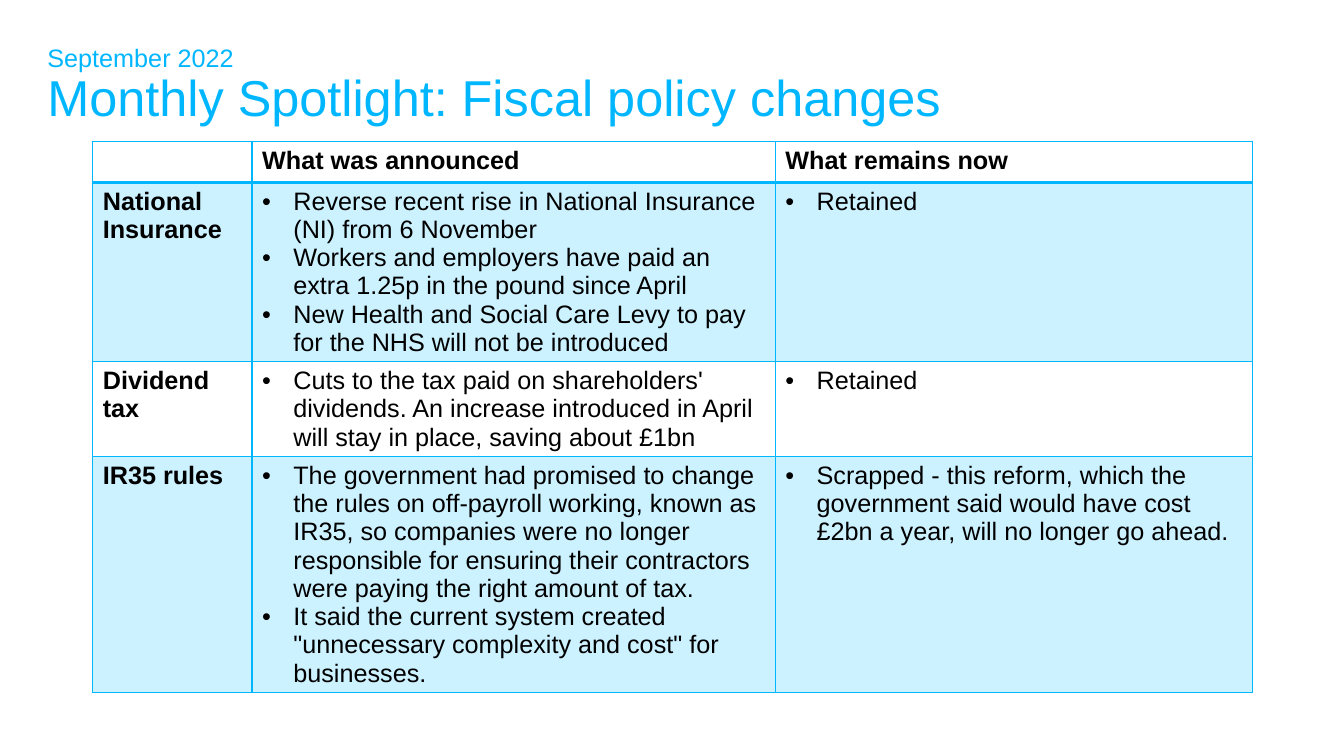
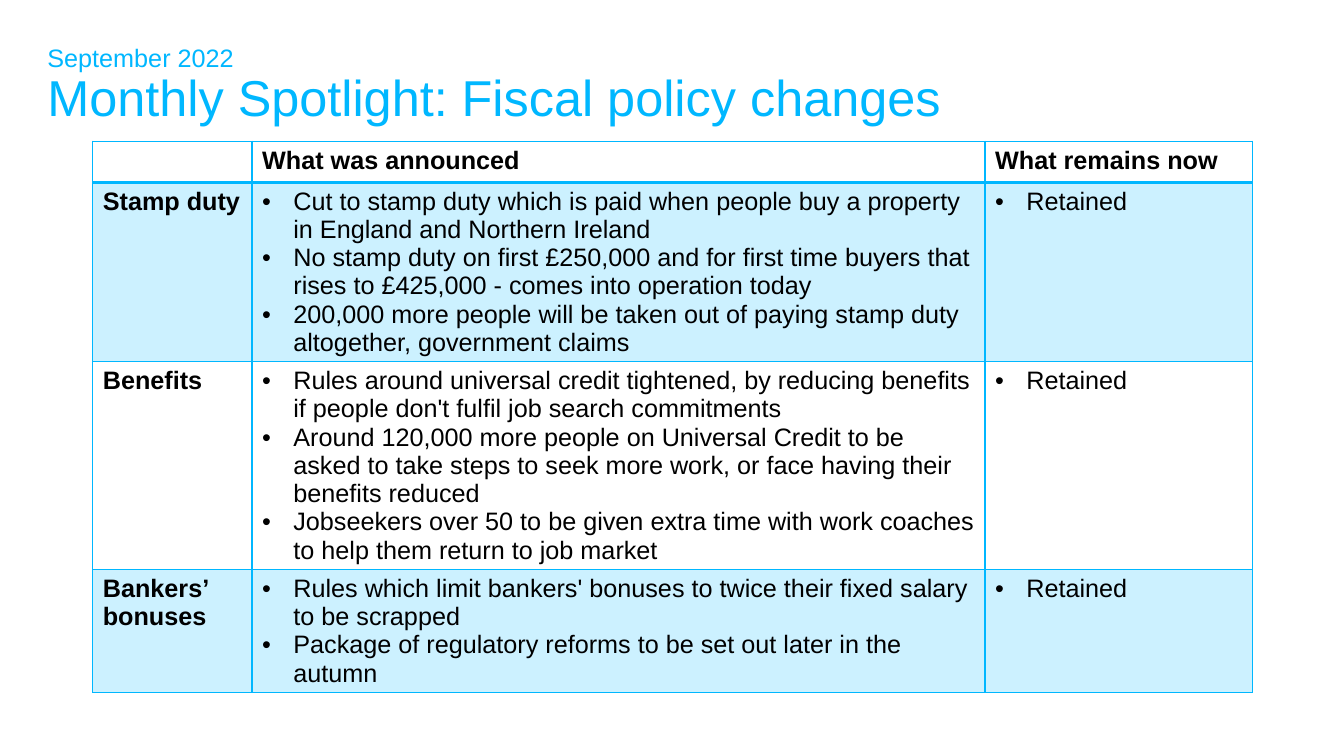
from lxml.etree import SubElement
from pptx import Presentation
from pptx.dml.color import RGBColor
from pptx.enum.text import MSO_ANCHOR, MSO_AUTO_SIZE, PP_ALIGN
from pptx.oxml.ns import qn
from pptx.util import Inches, Pt

ACCENT = "00B7FF"
BAND = "CCF1FF"
WHITE = "FFFFFF"
BLACK = "000000"
FONT = "Arial"
BODY_SIZE = 18
TITLE_SIZE = 36
TITLE_BOX = (0.37, 0.33, 12.6, 1.05)
TABLE_BOX = (0.92, 1.4, 11.5)
BULLET_INDENT = 0.31

MONTH = "September 2022"
TITLE = "Monthly Spotlight: Fiscal policy changes"
HEADINGS = ("", "What was announced", "What remains now")

TAX_WIDTHS = (1.58, 5.19, 4.73)
TAX_HEIGHTS = (0.41, 1.78, 0.94, 2.34)
TAX_ROWS = [
    ("National Insurance",
     ["Reverse recent rise in National Insurance (NI) from 6 November",
      "Workers and employers have paid an extra 1.25p in the pound since April",
      "New Health and Social Care Levy to pay for the NHS will not be introduced"],
     ["Retained"]),
    ("Dividend tax",
     ["Cuts to the tax paid on shareholders' dividends. An increase introduced "
      "in April will stay in place, saving about £1bn"],
     ["Retained"]),
    ("IR35 rules",
     ["The government had promised to change the rules on off-payroll working, "
      "known as IR35, so companies were no longer responsible for ensuring "
      "their contractors were paying the right amount of tax.",
      "It said the current system created \"unnecessary complexity and cost\" "
      "for businesses."],
     ["Scrapped - this reform, which the government said would have cost £2bn "
      "a year, will no longer go ahead."]),
]

WELFARE_WIDTHS = (1.58, 7.27, 2.65)
WELFARE_HEIGHTS = (0.41, 1.78, 2.06, 1.22)
WELFARE_ROWS = [
    ("Stamp duty",
     ["Cut to stamp duty which is paid when people buy a property in England "
      "and Northern Ireland",
      "No stamp duty on first £250,000 and for first time buyers that rises to "
      "£425,000 - comes into operation today",
      "200,000 more people will be taken out of paying stamp duty altogether, "
      "government claims"],
     ["Retained"]),
    ("Benefits",
     ["Rules around universal credit tightened, by reducing benefits if people "
      "don't fulfil job search commitments",
      "Around 120,000 more people on Universal Credit to be asked to take steps "
      "to seek more work, or face having their benefits reduced",
      "Jobseekers over 50 to be given extra time with work coaches to help them "
      "return to job market"],
     ["Retained"]),
    ("Bankers’ bonuses",
     ["Rules which limit bankers' bonuses to twice their fixed salary to be "
      "scrapped",
      "Package of regulatory reforms to be set out later in the autumn"],
     ["Retained"]),
]


def color(value):
    return RGBColor.from_string(value)


def add_run(paragraph, text, size, text_color, bold=False):
    run = paragraph.add_run()
    run.text = text
    run.font.name = FONT
    run.font.size = Pt(size)
    run.font.bold = bold
    run.font.color.rgb = color(text_color)


def add_title(slide, box):
    title = slide.shapes.title
    title.left, title.top, title.width, title.height = map(Inches, box)
    frame = title.text_frame
    frame.auto_size = MSO_AUTO_SIZE.NONE
    frame.word_wrap = True
    frame.vertical_anchor = MSO_ANCHOR.MIDDLE
    paragraph = frame.paragraphs[0]
    paragraph.alignment = PP_ALIGN.LEFT
    paragraph.line_spacing = 0.9
    add_run(paragraph, MONTH, BODY_SIZE, ACCENT)
    paragraph.add_line_break()
    line_break = paragraph._p.find(qn("a:br"))
    SubElement(line_break, qn("a:rPr"), sz=str(BODY_SIZE * 100))
    add_run(paragraph, TITLE, TITLE_SIZE, ACCENT)


def add_bullet(paragraph):
    properties = paragraph._p.get_or_add_pPr()
    properties.set("marL", str(Inches(BULLET_INDENT)))
    properties.set("indent", str(-Inches(BULLET_INDENT)))
    SubElement(properties, qn("a:buFont"), typeface=FONT)
    SubElement(properties, qn("a:buChar"), char="•")


def set_borders(cell, top, bottom):
    properties = cell._tc.get_or_add_tcPr()
    for side, width in (("L", 1), ("R", 1), ("T", top), ("B", bottom)):
        line = SubElement(properties, qn(f"a:ln{side}"), w=str(Pt(width)))
        fill = SubElement(line, qn("a:solidFill"))
        SubElement(fill, qn("a:srgbClr"), val=ACCENT)


def fill_cell(cell, content):
    """Write a bold label for a string, or bullets for a list."""
    frame = cell.text_frame
    if isinstance(content, str):
        if content:
            add_run(frame.paragraphs[0], content, BODY_SIZE, BLACK, bold=True)
        return
    for index, text in enumerate(content):
        paragraph = frame.add_paragraph() if index else frame.paragraphs[0]
        add_bullet(paragraph)
        add_run(paragraph, text, BODY_SIZE, BLACK)


def add_policy_table(slide, box, widths, heights, rows):
    left, top, width = box
    frame = slide.shapes.add_table(
        len(heights), len(widths), Inches(left), Inches(top),
        Inches(width), Inches(sum(heights)))
    table = frame.table
    table.first_row = False
    table.horz_banding = False
    for column, column_width in zip(table.columns, widths):
        column.width = Inches(column_width)
    for row, height in zip(table.rows, heights):
        row.height = Inches(height)
    for row_index, contents in enumerate([HEADINGS, *rows]):
        for column_index, content in enumerate(contents):
            cell = table.cell(row_index, column_index)
            set_borders(cell, top=2 if row_index == 1 else 1,
                        bottom=2 if row_index == 0 else 1)
            cell.fill.solid()
            cell.fill.fore_color.rgb = color(BAND if row_index % 2 else WHITE)
            fill_cell(cell, content)


def add_spotlight_slide(presentation, widths, heights, rows):
    slide = presentation.slides.add_slide(presentation.slide_layouts[5])
    add_title(slide, TITLE_BOX)
    add_policy_table(slide, TABLE_BOX, widths, heights, rows)


def main():
    presentation = Presentation()
    presentation.slide_width = Inches(13.33)
    presentation.slide_height = Inches(7.5)
    add_spotlight_slide(presentation, TAX_WIDTHS, TAX_HEIGHTS, TAX_ROWS)
    add_spotlight_slide(presentation, WELFARE_WIDTHS, WELFARE_HEIGHTS, WELFARE_ROWS)
    presentation.save("out.pptx")


if __name__ == "__main__":
    main()
